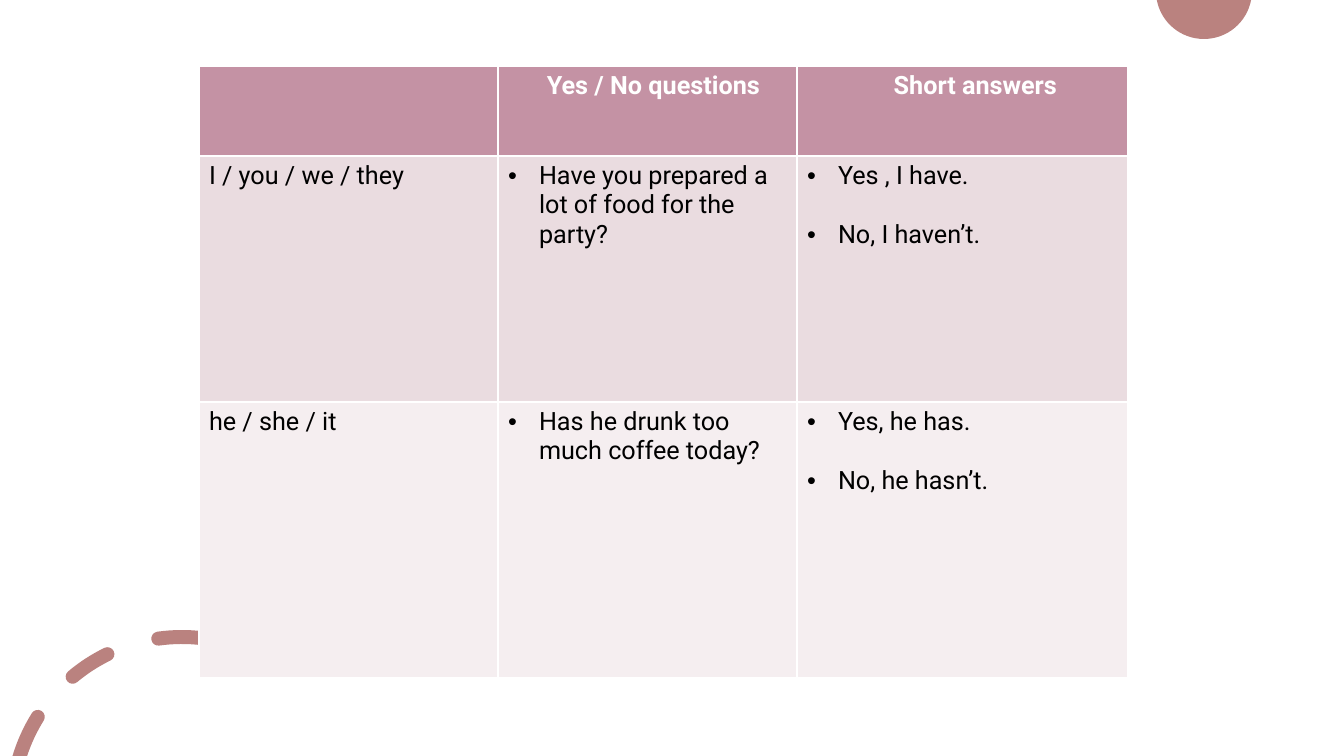
from math import acos, ceil, cos, degrees, radians, sin, tan

from lxml.etree import SubElement
from pptx import Presentation
from pptx.dml.color import RGBColor as RGB
from pptx.enum.text import PP_ALIGN as Align
from pptx.oxml.ns import qn
from pptx.util import Pt

WIDE, HIGH = 1344, 756
SCALE = 12192000 / WIDE
CLAY = RGB(0xBA, 0x82, 0x7F)
ROSE = RGB(0xC4, 0x92, 0xA4)
BLUSH = RGB(0xEA, 0xDC, 0xE0)
PALE = RGB(0xF5, 0xEE, 0xF0)
WHITE = RGB(0xFF, 0xFF, 0xFF)
BLACK = RGB(0, 0, 0)
FONT = "Roboto"
INDENT = 31

COLS = [299, 299, 331]
ROWS = [90, 246, 276]
FILLS = [ROSE, BLUSH, PALE]
SHIFTS = [0, 12, 26]
TEXTS = [
    ["", "Yes / No questions", "Short answers"],
    ["I / you / we / they", "Have you prepared a lot of food for the party?",
     "Yes , I have.\nNo, I haven’t."],
    ["he / she / it", "Has he drunk too much coffee today?",
     "Yes, he has.\nNo, he hasn’t."],
]


def px(size):
    """Turn pixels into EMU."""
    return round(size * SCALE)


def spot(mid, rad, turn):
    """Find a point on a circle, in degrees left of straight up."""
    return mid[0] - rad * sin(radians(turn)), mid[1] - rad * cos(radians(turn))


def arc(mid, rad, start, end):
    """List the curve points of an arc, three for each part after the first."""
    parts = ceil(abs(end - start) / 90)
    step = (end - start) / parts
    pull = 4 / 3 * tan(radians(step / 4))
    points = [spot(mid, rad, start)]
    for i in range(parts):
        here, there = start + i * step, start + (i + 1) * step
        (x1, y1), (x2, y2) = spot(mid, rad, here), spot(mid, rad, there)
        dx1, dy1 = spot((0, 0), rad * pull, here + 90)
        dx2, dy2 = spot((0, 0), rad * pull, there + 90)
        points += [(x1 + dx1, y1 + dy1), (x2 - dx2, y2 - dy2), (x2, y2)]
    return points


def outline(slide, loops):
    """Draw closed loops of curves as one plain shape."""
    loops = [[(px(x), px(y)) for x, y in loop] for loop in loops]
    pen = slide.shapes.build_freeform(*loops[0][0], scale=1.0)
    for i, loop in enumerate(loops):
        if i:
            pen.move_to(*loop[0])
        pen.add_line_segments(loop[1:], close=True)
    shape = pen.convert_to_shape()
    lines = list(shape._element.iter(qn("a:lnTo")))
    for trio in zip(lines[::3], lines[1::3], lines[2::3]):
        trio[0].tag = qn("a:cubicBezTo")
        for line in trio[1:]:
            trio[0].append(line[0])
            line.getparent().remove(line)
    shape.shadow.inherit = False
    shape.fill.solid()
    shape.fill.fore_color.rgb = CLAY
    shape.line.fill.background()


def dash(mid, rad, half, start, end):
    """List the points of a curved dash with round ends, cut at the slide's foot."""
    far, near = rad + half, rad - half
    stops = [min(end, degrees(acos((mid[1] - HIGH) / r))) for r in (far, near)]
    outer = arc(mid, far, start, stops[0])
    inner = arc(mid, near, stops[1], start)
    if max(stops) < end or stops[0] != stops[1]:
        cap = [outer[-1], outer[-1], inner[0], inner[0]]
    else:
        cap = arc(spot(mid, rad, end), half, end, end + 180)
    tail = arc(spot(mid, rad, start), half, start + 180, start + 360)
    return outer + cap[1:] + inner[1:] + tail[1:]


def decor(slide):
    """Draw the cut disc at the top and the dashed ring at the bottom."""
    outline(slide, [arc((1204, -9), 48, 100.8, 259.2)])
    spans = [(58, 80), (26, 40), (-7, 8)]
    outline(slide, [dash((182, 807), 170, 7, *span) for span in spans])


def bullet(para):
    """Give a paragraph a hanging bullet."""
    props = para._p.get_or_add_pPr()
    props.set("marL", str(px(INDENT)))
    props.set("indent", str(-px(INDENT)))
    SubElement(props, qn("a:buFont")).set("typeface", "Arial")
    SubElement(props, qn("a:buChar")).set("char", "•")


def write(cell, row, col):
    """Fill one cell with its text and colours."""
    cell.fill.solid()
    cell.fill.fore_color.rgb = FILLS[row]
    cell.text_frame.text = TEXTS[row][col]
    if row == 0:
        cell.margin_left = px(10 + SHIFTS[col])
    for i, para in enumerate(cell.text_frame.paragraphs):
        if i:
            para.space_before = Pt(21)
        if row == 0:
            para.alignment = Align.CENTER
        elif col:
            bullet(para)
        for run in para.runs:
            font = run.font
            font.name, font.size, font.bold = FONT, Pt(18), row == 0
            font.color.rgb = BLACK if row else WHITE


def grammar(slide, left, top):
    """Place the table of questions and answers."""
    table = slide.shapes.add_table(
        len(ROWS), len(COLS), px(left), px(top), px(sum(COLS)), px(sum(ROWS))).table
    for col, width in zip(table.columns, COLS):
        col.width = px(width)
    for row, height in zip(table.rows, ROWS):
        row.height = px(height)
    for r in range(len(ROWS)):
        for c in range(len(COLS)):
            write(table.cell(r, c), r, c)


def main():
    """Build the slide and save it."""
    deck = Presentation()
    deck.slide_width, deck.slide_height = px(WIDE), px(HIGH)
    slide = deck.slides.add_slide(deck.slide_layouts[6])
    decor(slide)
    grammar(slide, 199, 66)
    deck.save("out.pptx")


if __name__ == "__main__":
    main()
